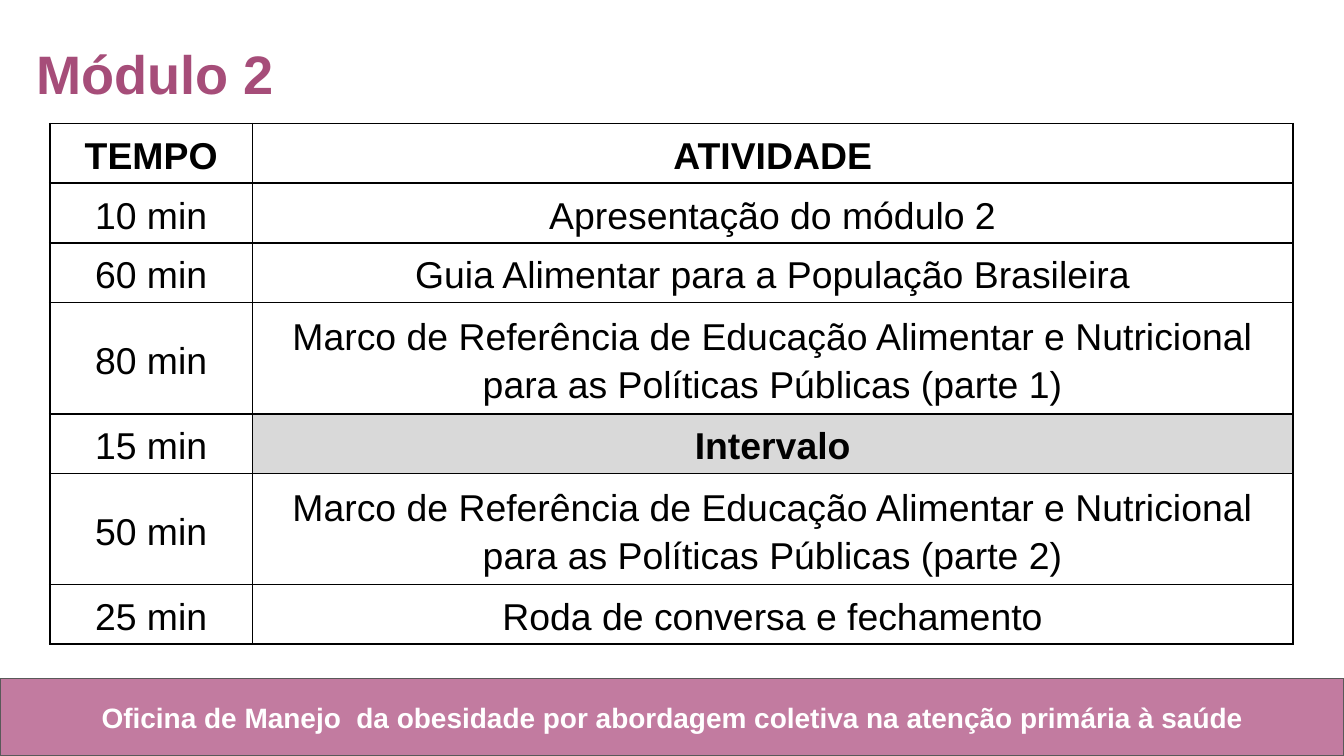
from dataclasses import dataclass

from lxml import etree
from pptx import Presentation
from pptx.dml.color import RGBColor
from pptx.enum import shapes, text
from pptx.oxml import ns
from pptx.util import Inches, Pt


@dataclass(frozen=True)
class Theme:
    font: str = "Arial"
    title_color: str = "A64D79"
    band_color: str = "C27BA0"
    band_line: str = "595959"
    light: str = "FFFFFF"
    ink: str = "000000"
    break_fill: str = "D9D9D9"
    title_size: float = 29
    table_size: float = 20
    footer_size: float = 15
    spacing: float = 1.15


THEME = Theme()
COLUMN_WIDTHS = (1.51, 7.74)
ROW_HEIGHTS = (0.3, 0.26, 0.26, 0.45, 0.3, 0.45, 0.26)
FRAMEWORK = "Marco de Referência de Educação Alimentar e Nutricional para as Políticas Públicas"
BREAK = "Intervalo"
SCHEDULE = (
    ("TEMPO", "ATIVIDADE"),
    ("10 min", "Apresentação do módulo 2"),
    ("60 min", "Guia Alimentar para a População Brasileira"),
    ("80 min", f"{FRAMEWORK} (parte 1)"),
    ("15 min", BREAK),
    ("50 min", f"{FRAMEWORK} (parte 2)"),
    ("25 min", "Roda de conversa e fechamento"),
)


def write(frame, words, size, color, bold=True, align=None, spacing=None):
    para = frame.paragraphs[0]
    para.alignment = align
    para.line_spacing = spacing
    span = para.add_run()
    span.text = words
    span.font.name = THEME.font
    span.font.size = Pt(size)
    span.font.bold = bold
    span.font.color.rgb = RGBColor.from_string(color)


def add_text(page, place, words, size, color, **style):
    box = page.shapes.add_textbox(*map(Inches, place))
    frame = box.text_frame
    frame.word_wrap = True
    frame.margin_left = frame.margin_right = Inches(0.1)
    frame.margin_top = frame.margin_bottom = Inches(0.1)
    write(frame, words, size, color, **style)


def add_band(page, place):
    band = page.shapes.add_shape(shapes.MSO_SHAPE.RECTANGLE, *map(Inches, place))
    band.shadow.inherit = False
    band.fill.solid()
    band.fill.fore_color.rgb = RGBColor.from_string(THEME.band_color)
    band.line.color.rgb = RGBColor.from_string(THEME.band_line)
    band.line.width = Pt(0.75)


def add_borders(cell):
    properties = cell._tc.get_or_add_tcPr()
    for side in ("lnL", "lnR", "lnT", "lnB"):
        line = etree.SubElement(properties, ns.qn(f"a:{side}"), w=str(Pt(1)))
        fill = etree.SubElement(line, ns.qn("a:solidFill"))
        etree.SubElement(fill, ns.qn("a:srgbClr"), val=THEME.ink)


def fill_cell(cell, words, bold, shaded):
    cell.margin_left = cell.margin_right = Inches(0.03)
    cell.margin_top = cell.margin_bottom = Inches(0.03)
    cell.vertical_anchor = text.MSO_ANCHOR.MIDDLE
    add_borders(cell)
    if shaded:
        cell.fill.solid()
        cell.fill.fore_color.rgb = RGBColor.from_string(THEME.break_fill)
    else:
        cell.fill.background()
    write(cell.text_frame, words, THEME.table_size, THEME.ink, bold=bold,
          align=text.PP_ALIGN.CENTER, spacing=THEME.spacing)


def add_schedule(page, left, top):
    table = page.shapes.add_table(
        len(SCHEDULE), len(COLUMN_WIDTHS), Inches(left), Inches(top),
        Inches(sum(COLUMN_WIDTHS)), Inches(sum(ROW_HEIGHTS))).table
    table.horz_banding = False
    table.first_row = False
    for column, width in zip(table.columns, COLUMN_WIDTHS):
        column.width = Inches(width)
    for row_index, (entry, height) in enumerate(zip(SCHEDULE, ROW_HEIGHTS)):
        table.rows[row_index].height = Inches(height)
        for column_index, words in enumerate(entry):
            shaded = words == BREAK
            fill_cell(table.cell(row_index, column_index), words,
                      bold=row_index == 0 or shaded, shaded=shaded)


def main():
    deck = Presentation()
    deck.slide_width = Inches(10)
    deck.slide_height = deck.slide_width * 9 // 16
    page = deck.slides.add_slide(deck.slide_layouts[6])
    add_band(page, (0, 5.05, 10, 0.57))
    add_text(page, (0.34, 5.11, 9.33, 0.45),
             "Oficina de Manejo  da obesidade por abordagem coletiva na atenção primária à saúde",
             THEME.footer_size, THEME.light, align=text.PP_ALIGN.CENTER)
    add_schedule(page, 0.37, 0.92)
    add_text(page, (0.17, 0.13, 7.57, 0.74), "Módulo 2",
             THEME.title_size, THEME.title_color, spacing=THEME.spacing)
    deck.save("out.pptx")


if __name__ == "__main__":
    main()
